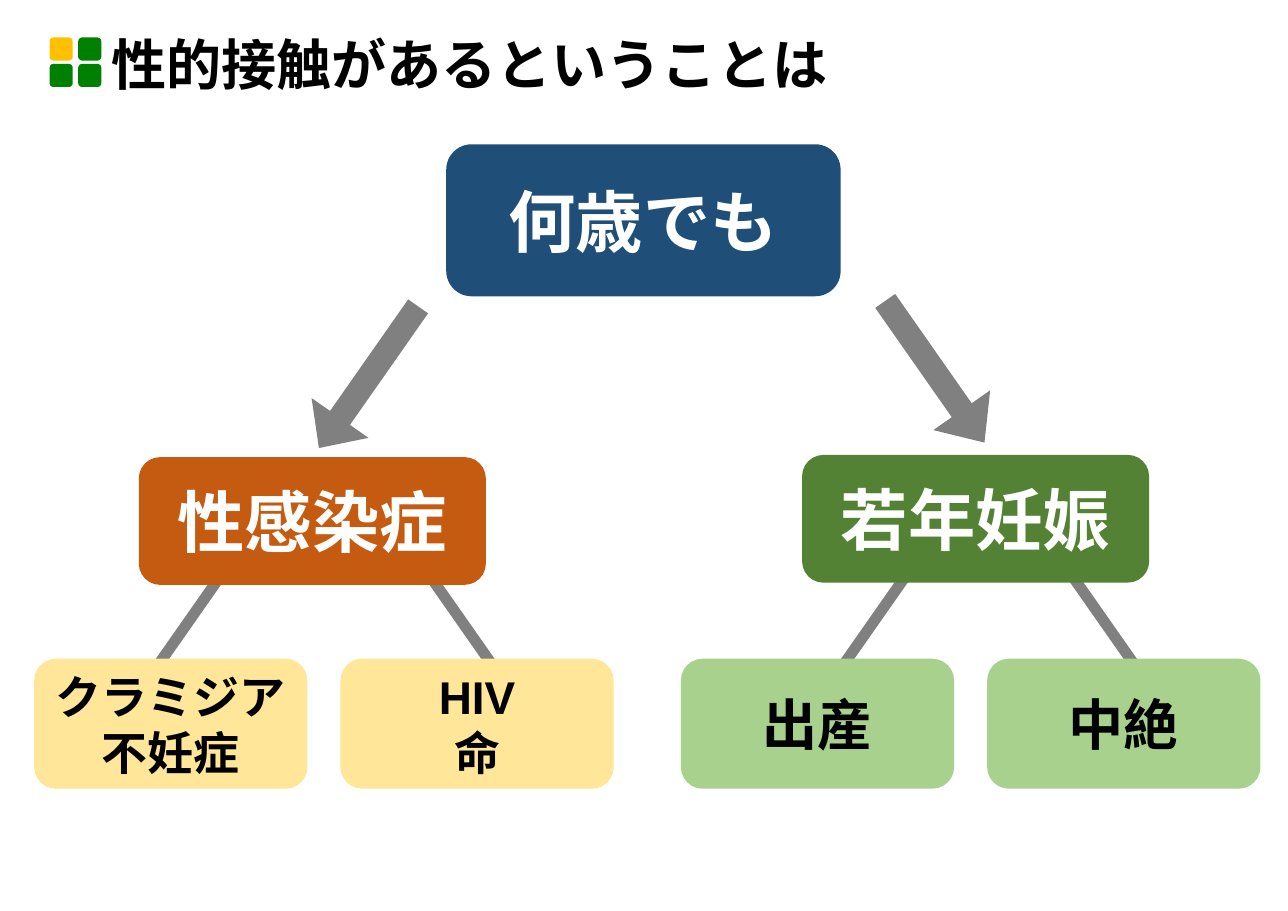
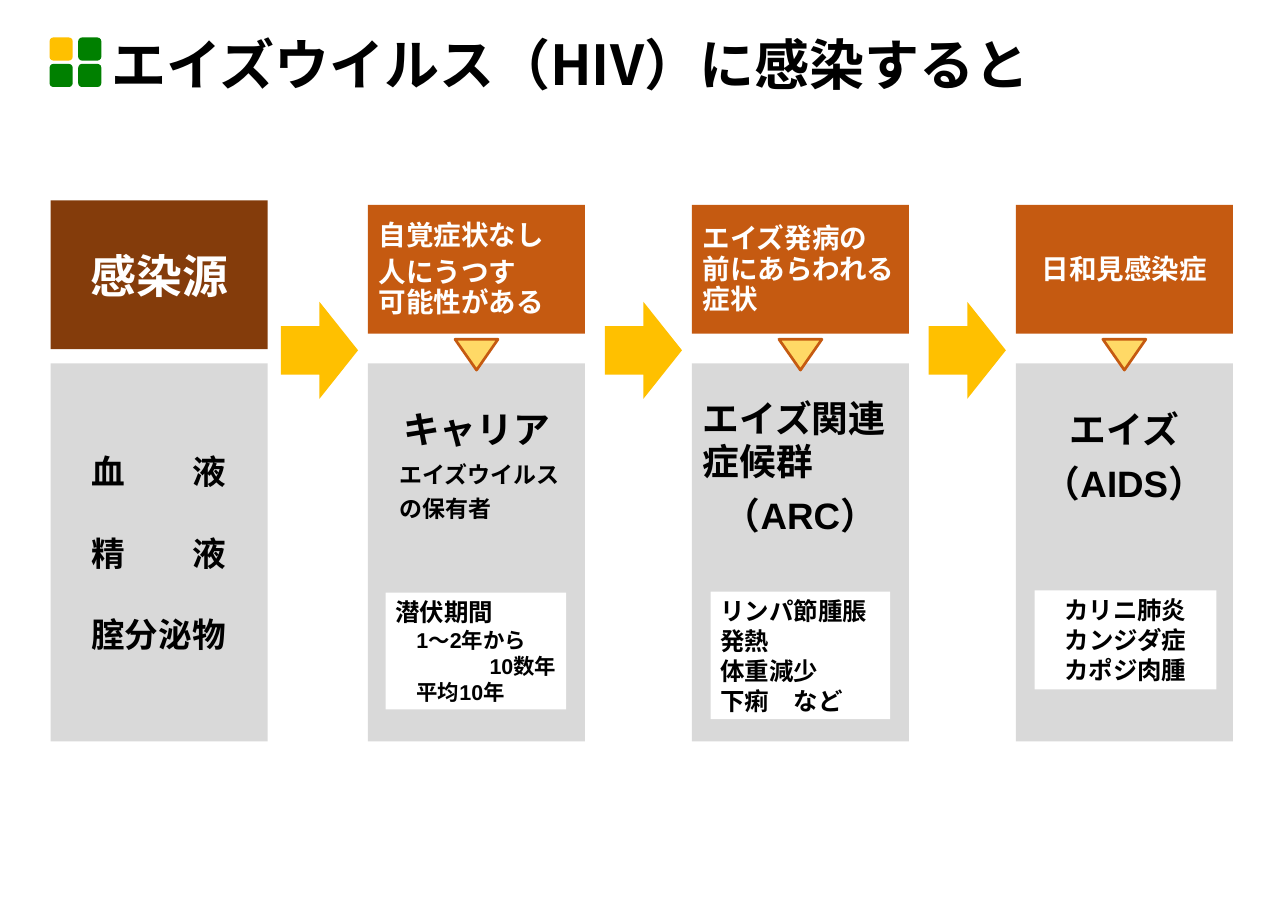
from dataclasses import dataclass
from typing import Optional

from lxml.etree import SubElement
from pptx import Presentation
from pptx.dml.color import RGBColor
from pptx.enum.shapes import MSO_SHAPE as Preset
from pptx.enum.text import MSO_ANCHOR as Anchor, PP_ALIGN as Align
from pptx.oxml.ns import qn
from pptx.util import Inches, Pt

COLORS = {
    "black": "000000", "white": "FFFFFF", "navy": "1F4E79", "gray": "808080",
    "orange": "C55A11", "brown": "843C0B", "panel": "D9D9D9", "gold": "FFC000",
    "pale_gold": "FFD966", "cream": "FFE699", "forest": "548235",
    "pale_green": "A9D18E", "green": "008000",
}
LATIN_FONT = "Arial"
JAPANESE_FONT = "Noto Sans CJK JP"
LINE_FACTOR = 1.22
DEFAULT_INSETS = (0.1, 0.05, 0.1, 0.05)
PANEL_INSETS = (0.1, 0.39, 0.1, 0.05)
DETAIL_INSETS = (0.09, 0.04, 0.09, 0.04)


@dataclass(frozen=True)
class Frame:
    left: float
    top: float
    width: float
    height: float


@dataclass(frozen=True)
class Line:
    text: str
    size: float
    align: Align = Align.CENTER
    spacing: Optional[float] = None
    before: float = 0
    after: float = 0
    indent: float = 0
    tab: float = 0


@dataclass(frozen=True)
class Stage:
    """One column of the course of infection, entered through an arrow."""
    symptom: list[Line]
    condition: list[Line]
    detail: list[Line]
    detail_frame: Frame


@dataclass(frozen=True)
class Branch:
    name: str
    color: str
    frame: Frame
    outcome_color: str
    outcomes: list[list[Line]]
    outcome_left: float
    struts: list[tuple[Frame, int]]


def rows(texts: list[str], size: float, align: Align = Align.CENTER, **layout) -> list[Line]:
    """Several lines of one style, single-spaced unless a spacing is given."""
    layout.setdefault("spacing", size * LINE_FACTOR)
    return [Line(text, size, align, **layout) for text in texts]


def color_of(name: str) -> RGBColor:
    return RGBColor.from_string(COLORS[name])


def style_span(span, size: float, color: str, latin: str) -> None:
    span.font.size = Pt(size)
    span.font.bold = True
    span.font.name = latin
    span.font.color.rgb = color_of(color)
    SubElement(span.font._element, qn("a:ea")).set("typeface", JAPANESE_FONT)


def write(box, lines: list[Line], color: str, insets=DEFAULT_INSETS,
          anchor: Anchor = Anchor.MIDDLE, latin: str = LATIN_FONT) -> None:
    text_frame = box.text_frame
    text_frame.word_wrap = True
    text_frame.vertical_anchor = anchor
    (text_frame.margin_left, text_frame.margin_top,
     text_frame.margin_right, text_frame.margin_bottom) = map(Inches, insets)
    text_frame.text = "\n".join(line.text for line in lines)
    for para, line in zip(text_frame.paragraphs, lines):
        para.alignment = line.align
        para.space_before = Pt(line.before)
        para.space_after = Pt(line.after)
        if line.spacing:
            para.line_spacing = Pt(line.spacing)
        properties = para._p.get_or_add_pPr()
        if line.indent:
            properties.set("marL", str(Inches(line.indent)))
        if line.tab:
            tab = SubElement(SubElement(properties, qn("a:tabLst")), qn("a:tab"))
            tab.set("pos", str(Inches(line.tab)))
            tab.set("algn", "l")
        for span in para.runs:
            style_span(span, line.size, color, latin)


def add_box(page, preset: Preset, frame: Frame, fill: str, rotation: float = 0,
            adjustments: tuple[float, ...] = (), outline: Optional[str] = None):
    box = page.shapes.add_shape(preset, Inches(frame.left), Inches(frame.top),
                                Inches(frame.width), Inches(frame.height))
    box.shadow.inherit = False
    box.fill.solid()
    box.fill.fore_color.rgb = color_of(fill)
    box.rotation = rotation
    for index, value in enumerate(adjustments):
        box.adjustments[index] = value
    if outline:
        box.line.color.rgb = color_of(outline)
        box.line.width = Pt(1.75)
    else:
        box.line.fill.background()
    return box


def add_titled_page(deck, title: str):
    """Blank page with the four-tile emblem and the title."""
    page = deck.slides.add_slide(deck.slide_layouts[6])
    for row in range(2):
        for column in range(2):
            tile = Frame(0.45 + 0.26 * column, 0.34 + 0.24 * row, 0.21, 0.21)
            add_box(page, Preset.ROUNDED_RECTANGLE, tile,
                    "green" if row or column else "gold")
    box = page.shapes.add_textbox(Inches(0.91), Inches(0.27), Inches(9.92), Inches(0.68))
    write(box, [Line(title, 36, Align.LEFT)], "black", latin=JAPANESE_FONT)
    box.text_frame.paragraphs[0].line_spacing = 0.9
    return page


def draw_branch(page, branch: Branch) -> None:
    for frame, angle in branch.struts:
        add_box(page, Preset.RECTANGLE, frame, "gray", angle)
    head = add_box(page, Preset.ROUNDED_RECTANGLE, branch.frame, branch.color)
    write(head, [Line(branch.name, 44)], "white")
    for index, lines in enumerate(branch.outcomes):
        frame = Frame(branch.outcome_left + 2.78 * index, 5.98, 2.48, 1.18)
        write(add_box(page, Preset.ROUNDED_RECTANGLE, frame, branch.outcome_color),
              lines, "black")


def draw_consequences(deck) -> None:
    page = add_titled_page(deck, "性的接触があるということは")
    root = add_box(page, Preset.ROUNDED_RECTANGLE, Frame(4.05, 1.31, 3.58, 1.38), "navy")
    write(root, [Line("何歳でも", 44)], "white")
    for left, top, angle, head in ((8.17, 2.59, 325, 0.57), (3.03, 2.64, 35, 0.53)):
        add_box(page, Preset.DOWN_ARROW, Frame(left, top, 0.63, 1.57), "gray",
                angle, (0.35, head))
    branches = [
        Branch("性感染症", "orange", Frame(1.26, 4.15, 3.15, 1.16), "cream",
               [rows(["クラミジア", "不妊症"], 30), rows(["HIV", "命"], 30)], 0.31,
               [(Frame(1.65, 5.17, 0.1, 0.98), 35), (Frame(4.13, 5.14, 0.1, 0.97), 325)]),
        Branch("若年妊娠", "forest", Frame(7.28, 4.13, 3.15, 1.16), "pale_green",
               [[Line("出産", 36)], [Line("中絶", 36)]], 6.18,
               [(Frame(7.89, 5.16, 0.1, 0.94), 35), (Frame(9.96, 5.14, 0.1, 0.97), 325)]),
    ]
    for branch in branches:
        draw_branch(page, branch)


def draw_stage(page, stage: Stage, left: float) -> None:
    add_box(page, Preset.RIGHT_ARROW, Frame(left - 0.79, 2.74, 0.7, 0.88), "gold")
    symptom = add_box(page, Preset.RECTANGLE, Frame(left, 1.86, 1.97, 1.17), "orange")
    write(symptom, stage.symptom, "white")
    condition = add_box(page, Preset.RECTANGLE, Frame(left, 3.3, 1.97, 3.43), "panel")
    write(condition, stage.condition, "black", PANEL_INSETS, Anchor.TOP)
    add_box(page, Preset.ISOSCELES_TRIANGLE, Frame(left + 0.79, 3.08, 0.39, 0.28),
            "pale_gold", 180, outline="orange")
    detail = add_box(page, Preset.RECTANGLE, stage.detail_frame, "white")
    write(detail, stage.detail, "black", DETAIL_INSETS, Anchor.TOP)


def draw_infection_course(deck) -> None:
    page = add_titled_page(deck, "エイズウイルス（HIV）に感染すると")
    source = add_box(page, Preset.RECTANGLE, Frame(0.46, 1.82, 1.97, 1.35), "brown")
    write(source, [Line("感染源", 30)], "white")
    fluids = add_box(page, Preset.RECTANGLE, Frame(0.46, 3.3, 1.97, 3.43), "panel")
    fluid_lines = rows(["血\t液"], 22, Align.LEFT, tab=0.92)
    fluid_lines += rows(["精\t液", "腟分泌物"], 22, Align.LEFT, before=26.5, tab=0.92)
    write(fluids, fluid_lines, "black", (0.37, 0.05, 0.1, 0.05))

    stages = [
        Stage(rows(["自覚症状なし"], 18, Align.LEFT, spacing=20, after=4)
              + rows(["人にうつす", "可能性がある"], 18, Align.LEFT, spacing=20),
              rows(["キャリア"], 24, after=6)
              + rows(["エイズウイルス", "の保有者"], 15, Align.LEFT, after=4, indent=0.19),
              rows(["潜伏期間"], 16, Align.LEFT)
              + rows(["1〜2年から"], 14, Align.LEFT, indent=0.19)
              + rows(["10数年"], 14, Align.RIGHT, indent=0.19)
              + rows(["平均10年"], 14, Align.LEFT, indent=0.19),
              Frame(3.5, 5.38, 1.64, 1.06)),
        Stage(rows(["エイズ発病の", "前にあらわれる症状"], 18, Align.LEFT, spacing=20),
              rows(["エイズ関連", "症候群"], 24, Align.LEFT, spacing=22, after=6)
              + rows(["（ARC）"], 24, after=6),
              rows(["リンパ節腫脹", "発熱", "体重減少", "下痢　など"], 16, Align.LEFT),
              Frame(6.45, 5.37, 1.63, 1.16)),
        Stage(rows(["日和見感染症"], 18, spacing=20),
              rows(["エイズ", "（AIDS）"], 24, after=6),
              rows(["カリニ肺炎", "カンジダ症", "カポジ肉腫"], 16),
              Frame(9.39, 5.36, 1.65, 0.9)),
    ]
    for index, stage in enumerate(stages):
        draw_stage(page, stage, 3.34 + 2.94 * index)


def main() -> None:
    deck = Presentation()
    deck.slide_width = Inches(11.69)
    deck.slide_height = Inches(8.27)
    draw_consequences(deck)
    draw_infection_course(deck)
    deck.save("out.pptx")


if __name__ == "__main__":
    main()
